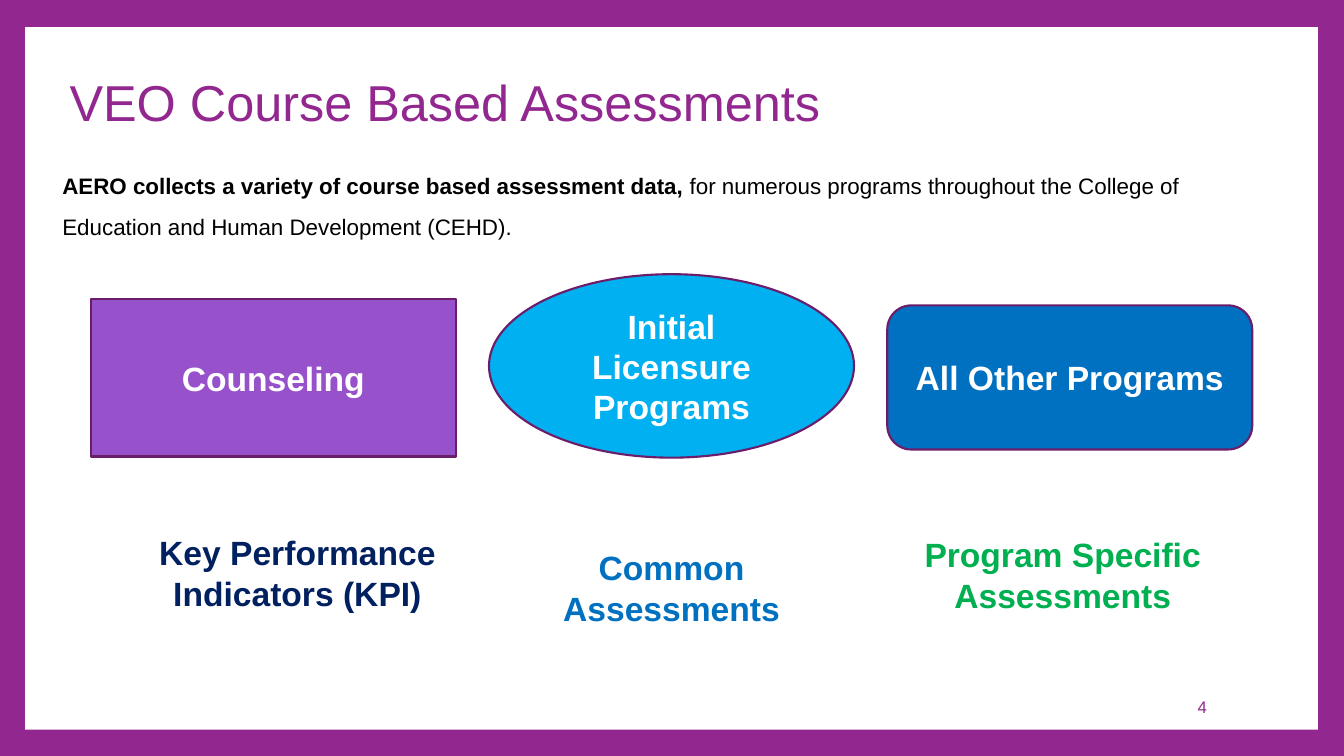
from pptx import Presentation
from pptx.dml.color import RGBColor
from pptx.enum.shapes import MSO_SHAPE
from pptx.enum.text import MSO_ANCHOR, PP_ALIGN
from pptx.util import Inches, Pt

RECT, OVAL, ROUNDED = MSO_SHAPE.RECTANGLE, MSO_SHAPE.OVAL, MSO_SHAPE.ROUNDED_RECTANGLE
LEFT, CENTER, RIGHT = PP_ALIGN.LEFT, PP_ALIGN.CENTER, PP_ALIGN.RIGHT
TOP, MIDDLE = MSO_ANCHOR.TOP, MSO_ANCHOR.MIDDLE
TITLE_ONLY = 5

COLORS = {
    "brand": "92278F", "outline": "6C1D6A", "white": "FFFFFF", "black": "000000",
    "purple": "9751CB", "sky": "00B0F0", "blue": "0070C0",
    "navy": "002060", "green": "00B050",
}

# Three equal columns of program shapes
COL_LEFT, COL_PITCH, COL_WIDTH = 0.9, 3.95, 3.62
LABEL_WIDTH, LABEL_HEIGHT = 3.14, 0.91

# Shape, name, fill, top, height, then label, colour, offset in column, top
PROGRAMS = [
    (RECT, "Counseling", "purple", 2.97, 1.56,
     "Key Performance Indicators (KPI)", "navy", 0.48, 5.23),
    (OVAL, "Initial Licensure Programs", "sky", 2.72, 1.82,
     "Common Assessments", "blue", 0.24, 5.38),
    (ROUNDED, "All Other Programs", "blue", 3.03, 1.43,
     "Program Specific Assessments", "green", 0.17, 5.25),
]


def rgb(name):
    return RGBColor.from_string(COLORS[name])


def write(s, runs, size, color, align=LEFT, anchor=TOP, bold=False, spacing=None):
    """Fill a shape with one paragraph made of the given runs."""
    tf = s.text_frame
    tf.word_wrap = True
    tf.vertical_anchor = anchor
    p = tf.paragraphs[0]
    p.alignment = align
    p.line_spacing = spacing
    p.font.name, p.font.size, p.font.bold = "Arial", Pt(size), bold
    p.font.color.rgb = rgb(color)
    for text in runs:
        p.add_run().text = text
    return p


def add_text(slide, box, *args, **kwargs):
    s = slide.shapes.add_textbox(*map(Inches, box))
    return write(s, *args, **kwargs)


def add_panel(slide, kind, box, fill, outline=None):
    s = slide.shapes.add_shape(kind, *map(Inches, box))
    s.shadow.inherit = False
    s.fill.solid()
    s.fill.fore_color.rgb = rgb(fill)
    if outline:
        s.line.color.rgb = rgb(outline)
        s.line.width = Pt(1.5)
    else:
        s.line.fill.background()
    return s


def add_title(slide, text, box):
    s = slide.shapes.title
    s.left, s.top, s.width, s.height = map(Inches, box)
    write(s, [text], 36, "brand", anchor=MIDDLE, spacing=0.9)


def main():
    prs = Presentation()
    prs.slide_width, prs.slide_height = Inches(13.33), Inches(7.5)
    slide = prs.slides.add_slide(prs.slide_layouts[TITLE_ONLY])

    # Coloured frame around a white page
    slide.background.fill.solid()
    slide.background.fill.fore_color.rgb = rgb("brand")
    add_panel(slide, RECT, (0.25, 0.27, 12.82, 6.97), "white")

    # Title, raised above the white page
    add_title(slide, "VEO Course Based Assessments", (0.59, 0.35, 9, 1.38))
    slide.shapes._spTree.append(slide.shapes.title._element)

    # Introduction with a bold opening
    intro = add_text(slide, (0.52, 1.53, 11.59, 0.86), [
        "AERO collects a variety of course based assessment data, ",
        "for numerous programs throughout the College of Education and Human "
        "Development (CEHD).",
    ], 16, "black", spacing=1.5)
    intro.runs[0].font.bold = True

    # Program shapes with their assessment labels
    for i, (kind, name, fill, top, height,
            label, color, offset, label_top) in enumerate(PROGRAMS):
        left = COL_LEFT + i * COL_PITCH
        s = add_panel(slide, kind, (left, top, COL_WIDTH, height), fill, "outline")
        write(s, [name], 24, "white", CENTER, MIDDLE, bold=True)
        add_text(slide, (left + offset, label_top, LABEL_WIDTH, LABEL_HEIGHT),
                 [label], 24, color, CENTER, bold=True)

    # Page number
    add_text(slide, (10.2, 6.81, 1.87, 0.4), ["4"], 12, "brand", RIGHT, MIDDLE)

    prs.save("out.pptx")


if __name__ == "__main__":
    main()
